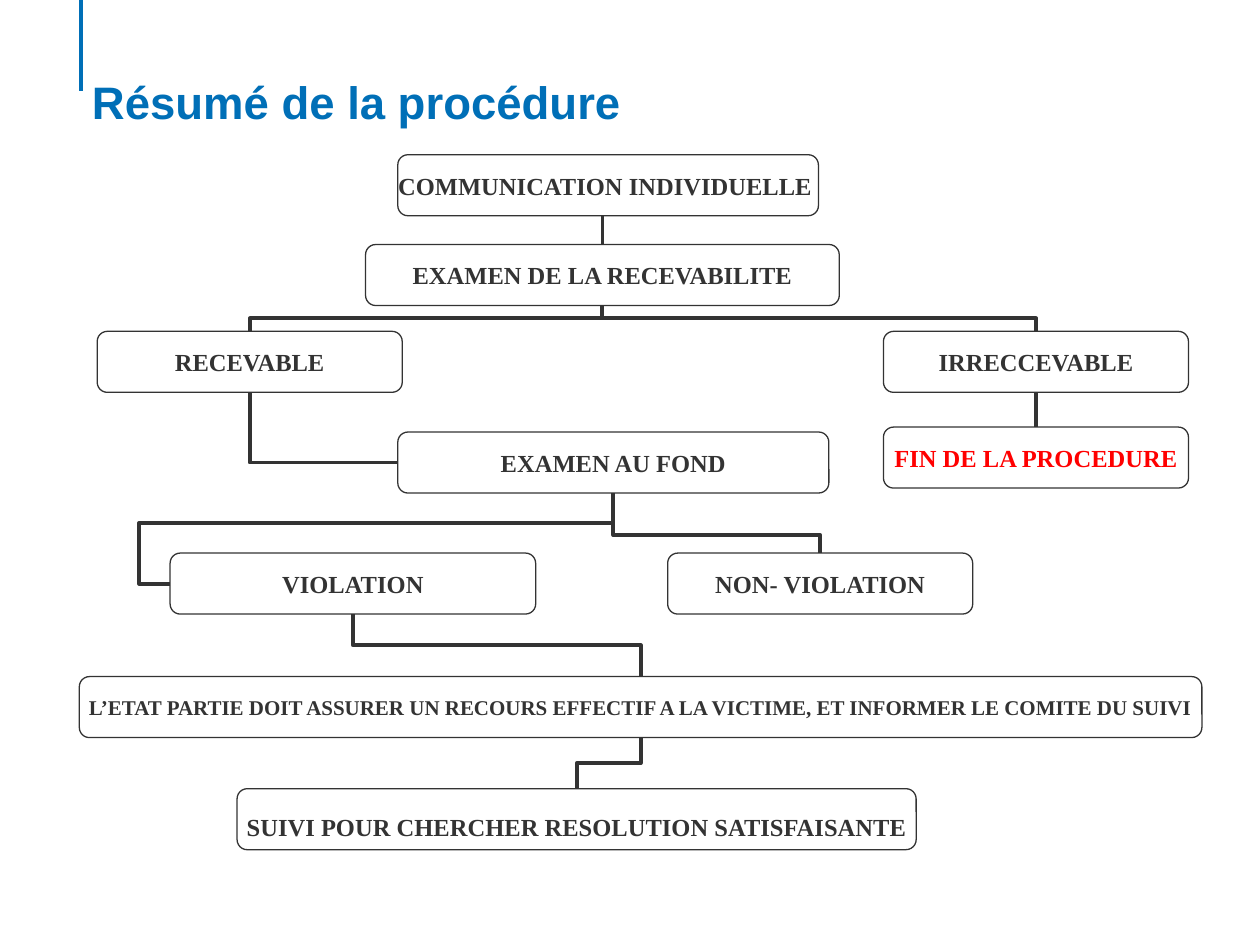
import pptx
import pptx.util
import pptx.dml.color
import pptx.enum.shapes
import pptx.enum.text
import pptx.oxml.ns
from lxml import etree

Cm, Pt = pptx.util.Cm, pptx.util.Pt
HUES = {"blue": "006FB7", "dark": "333333", "red": "FF0000", "white": "FFFFFF"}
HIGH = 1.23
TOP, LEFT, BOTTOM = 0, 1, 2

# key: text, left, top, width, text size, colour
STEPS = {
    "start": ("COMMUNICATION INDIVIDUELLE ", 8.02, 3.12, 8.48, 14, "dark"),
    "exam": ("EXAMEN DE LA RECEVABILITE", 7.37, 4.93, 9.55, 14, "dark"),
    "valid": ("RECEVABLE", 1.96, 6.68, 6.15, 14, "dark"),
    "void": ("IRRECCEVABLE", 17.81, 6.68, 6.15, 14, "dark"),
    "end": ("FIN DE LA PROCEDURE", 17.81, 8.61, 6.15, 14, "red"),
    "merits": ("EXAMEN AU FOND", 8.02, 8.71, 8.69, 14, "dark"),
    "clear": ("NON- VIOLATION", 13.46, 11.15, 6.15, 14, "dark"),
    "breach": ("VIOLATION", 3.43, 11.15, 7.37, 14, "dark"),
    "state": ("L’ETAT PARTIE DOIT ASSURER UN RECOURS EFFECTIF A LA VICTIME, "
              "ET INFORMER LE COMITE DU SUIVI", 1.6, 13.64, 22.63, 12, "dark"),
    "follow": ("SUIVI POUR CHERCHER RESOLUTION SATISFAISANTE",
               4.78, 15.9, 13.69, 14, "dark"),
}

# parent, child, share of the drop before the bend
DROPS = [
    ("exam", "valid", 0.5),
    ("exam", "void", 0.5),
    ("merits", "clear", 0.7),
    ("breach", "state", 0.5),
    ("state", "follow", 0.5),
]


def hue(name):
    return pptx.dml.color.RGBColor.from_string(HUES[name])


def write(para, text, font, size, tone):
    run = para.add_run()
    run.text = text
    run.font.name = font
    run.font.size = Pt(size)
    run.font.bold = True
    run.font.color.rgb = hue(tone)


def add_title(slide, text):
    title = slide.shapes.title
    title.left, title.top = Cm(1.6), Cm(1.37)
    title.width, title.height = Cm(21.49), Cm(2.44)
    frame = title.text_frame
    frame.vertical_anchor = pptx.enum.text.MSO_ANCHOR.TOP
    para = frame.paragraphs[0]
    para.alignment = pptx.enum.text.PP_ALIGN.LEFT
    write(para, text, "Arial", 26, "blue")


def add_box(slide, text, left, top, width, size, tone):
    box = slide.shapes.add_shape(
        pptx.enum.shapes.MSO_SHAPE.ROUNDED_RECTANGLE,
        Cm(left), Cm(top), Cm(width), Cm(HIGH))
    box.shadow.inherit = False
    box.fill.solid()
    box.fill.fore_color.rgb = hue("white")
    box.line.color.rgb = hue("dark")
    box.line.width = Pt(0.75)
    frame = box.text_frame
    frame.word_wrap = False
    frame.vertical_anchor = pptx.enum.text.MSO_ANCHOR.MIDDLE
    frame.margin_left = frame.margin_right = 0
    frame.margin_top = frame.margin_bottom = 0
    para = frame.paragraphs[0]
    para.alignment = pptx.enum.text.PP_ALIGN.CENTER
    write(para, text, "Times New Roman", size, tone)
    return box


def add_line(slide, start, end, tone="dark", width=2.25, bent=False):
    kinds = pptx.enum.shapes.MSO_CONNECTOR
    kind = kinds.ELBOW if bent else kinds.STRAIGHT
    line = slide.shapes.add_connector(kind, *start, *end)
    line.line.color.rgb = hue(tone)
    line.line.width = Pt(width)
    etree.SubElement(line._element.spPr, pptx.oxml.ns.qn("a:effectLst"))
    return line


def port(box, site):
    if site == LEFT:
        return box.left, box.top + box.height // 2
    drop = box.height if site == BOTTOM else 0
    return box.left + box.width // 2, box.top + drop


def link(slide, first, site, last, goal, bent=True):
    line = add_line(slide, port(first, site), port(last, goal), bent=bent)
    line.begin_connect(first, site)
    line.end_connect(last, goal)
    return line


def set_bend(line, preset, *shares):
    geom = line._element.spPr.find(pptx.oxml.ns.qn("a:prstGeom"))
    geom.set("prst", preset)
    guides = geom.find(pptx.oxml.ns.qn("a:avLst"))
    for num, share in enumerate(shares, 1):
        guide = etree.SubElement(guides, pptx.oxml.ns.qn("a:gd"))
        guide.set("name", f"adj{num}")
        guide.set("fmla", f"val {round(share * 100000)}")


def drop_link(slide, first, last, share):
    line = link(slide, first, BOTTOM, last, TOP)
    set_bend(line, "bentConnector3", share)
    # A turned elbow leaves its box downwards
    (ax, ay), (bx, by) = port(first, BOTTOM), port(last, TOP)
    wide, high = by - ay, abs(bx - ax)
    line.left, line.top = (ax + bx - wide) // 2, (ay + by - high) // 2
    line.width, line.height = wide, high
    xfrm = line._element.spPr.find(pptx.oxml.ns.qn("a:xfrm"))
    right = bx > ax
    xfrm.set("rot", "16200000" if right else "5400000")
    xfrm.set("flipH", "1" if right else "0")
    xfrm.set("flipV", "0")


def main():
    deck = pptx.Presentation()
    deck.slide_width, deck.slide_height = Cm(25.4), Cm(19.05)
    slide = deck.slides.add_slide(deck.slide_layouts[5])

    # Heading and its rule
    add_line(slide, (Cm(1.63), 0), (Cm(1.63), Cm(1.83)), "blue", 2)
    add_title(slide, "Résumé de la procédure")

    # Steps
    boxes = {key: add_box(slide, *step) for key, step in STEPS.items()}
    boxes["follow"].text_frame.margin_top = Cm(0.3)

    # Links
    foot = boxes["start"].top + boxes["start"].height
    middle, head = port(boxes["exam"], TOP)
    add_line(slide, (middle, foot), (middle, head))
    link(slide, boxes["void"], BOTTOM, boxes["end"], TOP, bent=False)
    for first, last, share in DROPS:
        drop_link(slide, boxes[first], boxes[last], share)
    side = link(slide, boxes["merits"], LEFT, boxes["valid"], BOTTOM)
    set_bend(side, "bentConnector2")
    loop = link(slide, boxes["breach"], LEFT, boxes["merits"], BOTTOM)
    set_bend(loop, "bentConnector4", -0.07, 0.67)

    deck.save("out.pptx")


if __name__ == "__main__":
    main()
